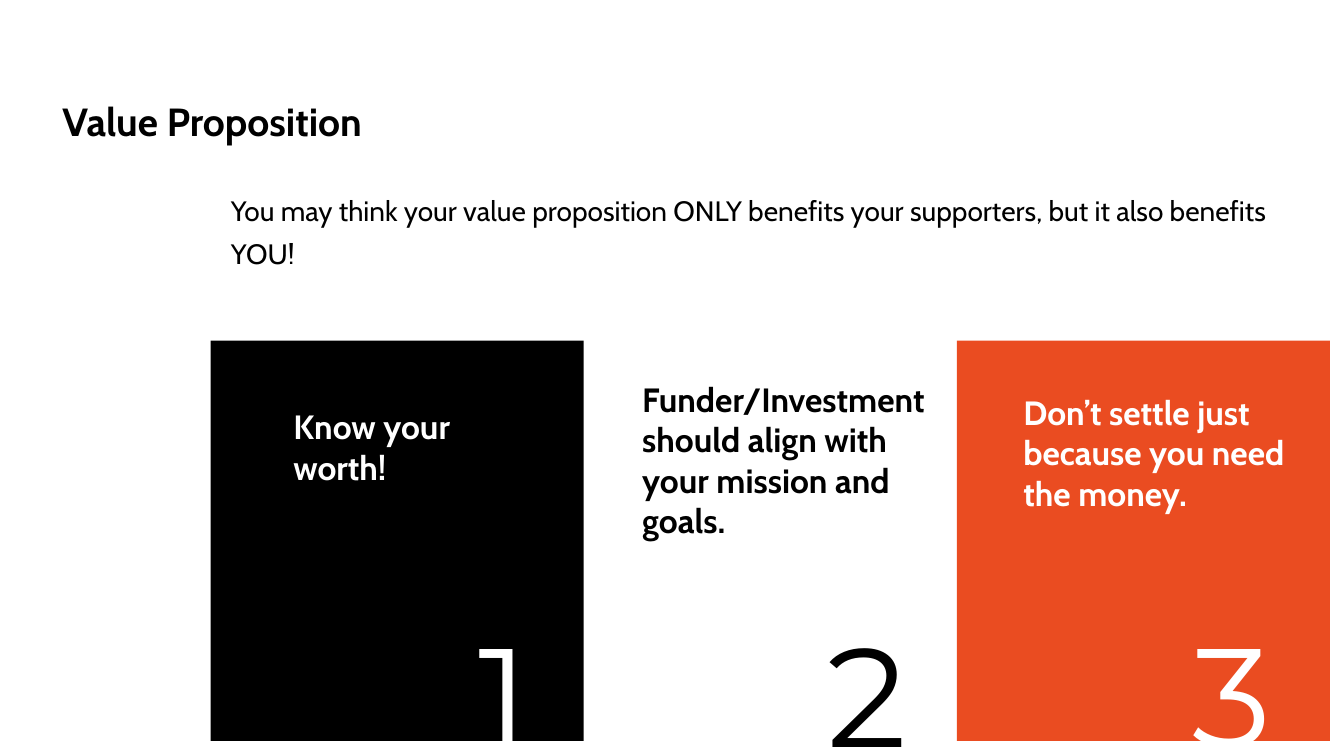
import pptx
import pptx.dml.color
import pptx.enum.shapes
import pptx.enum.text
import pptx.util

SLIDE_WIDTH, SLIDE_HEIGHT = 13.33, 7.5
CARD_LEFT, CARD_TOP, CARD_WIDTH, CARD_HEIGHT = 2.09, 3.38, 3.7, 3.97
NUMBER_LEFT, NUMBER_TOP, NUMBER_STEP = 4.18, 6, 3.61
BLACK, WHITE, ORANGE = "000000", "FFFFFF", "EA4C21"

CARDS = [
    {"message": "Know your worth!", "fill": BLACK, "ink": WHITE,
     "inset": (0.77, 0.62, 2.5, 1.57)},
    {"message": "Funder/Investment should align with your mission and goals.",
     "fill": None, "ink": BLACK, "inset": (0.53, 0.35, 3.1, 1.87)},
    {"message": "Don’t settle just because you need the money.",
     "fill": ORANGE, "ink": WHITE, "inset": (0.61, 0.48, 2.77, 1.87)},
]


def color(value):
    return pptx.dml.color.RGBColor.from_string(value)


def inches(box):
    return [pptx.util.Inches(length) for length in box]


def add_text(page, box, text, size, ink, face="Cabin", bold=False, **layout):
    frame = page.shapes.add_textbox(*inches(box)).text_frame
    margins = {"margin_left": 0.05, "margin_right": 0.05,
               "margin_top": 0.03, "margin_bottom": 0.03}
    for name, value in margins.items():
        setattr(frame, name, pptx.util.Inches(value))
    frame.word_wrap = True
    para = frame.paragraphs[0]
    for name, value in layout.items():
        setattr(para, name, value)
    span = para.add_run()
    span.text = text
    for name, value in {"name": face, "size": pptx.util.Pt(size), "bold": bold}.items():
        setattr(span.font, name, value)
    span.font.color.rgb = color(ink)


def add_heading(page, box):
    left, top, width, height = box
    add_text(page, (left, top, 6.47, 0.52), "Value Proposition", 28, BLACK, bold=True)
    add_text(page, (left + 1.67, top + 0.86, width - 1.67, height - 0.86),
             "You may think your value proposition ONLY benefits your supporters, "
             "but it also benefits YOU!", 20, BLACK, line_spacing=1.27)


def add_card(page, box, card):
    left, top, width, height = box
    if card["fill"]:
        panel = page.shapes.add_shape(
            pptx.enum.shapes.MSO_SHAPE.RECTANGLE, *inches(box))
        panel.shadow.inherit = False
        panel.fill.solid()
        panel.fill.fore_color.rgb = color(card["fill"])
        panel.line.fill.background()
    across, down, text_width, text_height = card["inset"]
    add_text(page, (left + across, top + down, text_width, text_height),
             card["message"], 24, card["ink"], bold=True)


def add_number(page, box, number, ink):
    add_text(page, box, str(number), 100, ink, face="Montserrat",
             alignment=pptx.enum.text.PP_ALIGN.CENTER)


def main():
    deck = pptx.Presentation()
    deck.slide_width, deck.slide_height = inches((SLIDE_WIDTH, SLIDE_HEIGHT))
    page = deck.slides.add_slide(deck.slide_layouts[6])
    add_heading(page, (0.57, 0.94, 12.32, 1.77))
    for index, card in enumerate(CARDS):
        left = CARD_LEFT + index * CARD_WIDTH
        add_card(page, (left, CARD_TOP, CARD_WIDTH, CARD_HEIGHT), card)
        add_number(page, (NUMBER_LEFT + index * NUMBER_STEP, NUMBER_TOP, 1.63, 1.73),
                   index + 1, card["ink"])
    deck.save("out.pptx")


if __name__ == "__main__":
    main()
